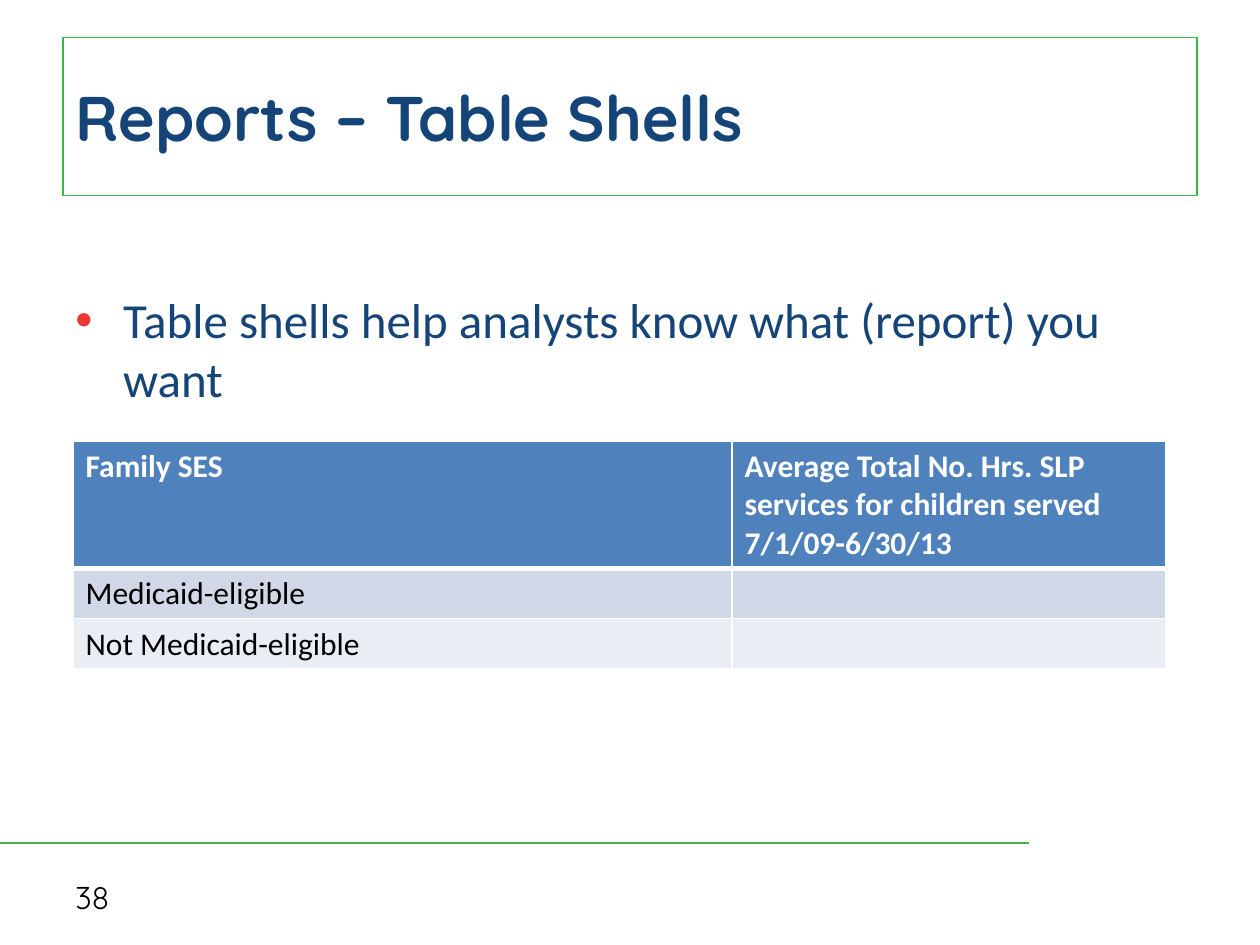
from lxml import etree
from pptx import Presentation
from pptx.dml.color import RGBColor
from pptx.enum import shapes, text
from pptx.oxml.ns import qn
from pptx.util import Inches, Pt

HUES = {"navy": "154578", "green": "39B54A", "red": "ED3532", "blue": "4F81BD",
        "band": "D0D8E8", "pale": "E9EDF4", "white": "FFFFFF", "black": "000000"}


def hue(name):
    return RGBColor.from_string(HUES[name])


def solid(parent, tag, name):
    """Add an element holding one plain colour."""
    node = etree.SubElement(parent, qn(tag))
    etree.SubElement(node, qn("a:srgbClr"), val=HUES[name])


class Deck:
    body = "Calibri"
    head = "Quicksand"

    def __init__(self):
        self.prs = Presentation()
        self.prs.slide_width, self.prs.slide_height = Inches(10), Inches(7.5)
        self.slide = self.prs.slides.add_slide(self.prs.slide_layouts[5])

    def place(self, shape, box):
        shape.left, shape.top, shape.width, shape.height = map(Inches, box)

    def run(self, para, words, size, color, font, bold=False):
        run = para.add_run()
        run.text = words
        run.font.size, run.font.name, run.font.bold = Pt(size), font, bold
        run.font.color.rgb = hue(color)

    def title(self, words, box):
        shape = self.slide.shapes.title
        self.place(shape, box)
        shape.line.color.rgb, shape.line.width = hue("green"), Pt(0.75)
        frame = shape.text_frame
        frame.auto_size = text.MSO_AUTO_SIZE.NONE
        frame.vertical_anchor = text.MSO_ANCHOR.MIDDLE
        para = frame.paragraphs[0]
        para.alignment = text.PP_ALIGN.LEFT
        self.run(para, words, 36, "navy", self.head, True)

    def label(self, words, box, size, color, font, anchor, bullet=False):
        frame = self.slide.shapes.add_textbox(*map(Inches, box)).text_frame
        frame.word_wrap = True
        frame.vertical_anchor = anchor
        para = frame.paragraphs[0]
        if bullet:
            self.bullet(para)
        self.run(para, words, size, color, font)

    def bullet(self, para):
        props = para._p.get_or_add_pPr()
        props.set("marL", str(Inches(0.38)))
        props.set("indent", str(Inches(-0.38)))
        solid(props, "a:buClr", "red")
        etree.SubElement(props, qn("a:buFont"), typeface="Arial")
        etree.SubElement(props, qn("a:buChar"), char="•")
        para.space_after = Pt(6)

    def rule(self, start, end):
        line = self.slide.shapes.add_connector(
            shapes.MSO_CONNECTOR.STRAIGHT, *map(Inches, start + end))
        line.line.color.rgb, line.line.width = hue("green"), Pt(1.5)
        etree.SubElement(line._element.spPr, qn("a:effectLst"))

    def edge(self, cell, widths):
        props = cell._tc.get_or_add_tcPr()
        for spot, (side, width) in enumerate(zip("LRTB", widths)):
            line = etree.Element(qn(f"a:ln{side}"), w=str(Pt(width)))
            fill = etree.SubElement(line, qn("a:solidFill"))
            etree.SubElement(fill, qn("a:srgbClr"), val=HUES["white"])
            props.insert(spot, line)

    def table(self, data, box, cols, rows, fills):
        grid = self.slide.shapes.add_table(
            len(rows), len(cols), *map(Inches, box)).table
        for col, width in zip(grid.columns, cols):
            col.width = Inches(width)
        for r, line in enumerate(data):
            grid.rows[r].height = Inches(rows[r])
            top = r == 0
            for c, words in enumerate(line):
                cell = grid.cell(r, c)
                cell.fill.solid()
                cell.fill.fore_color.rgb = hue(fills[r])
                self.edge(cell, (1, 1, 3 if r == 1 else 1, 3 if top else 1))
                if words:
                    self.run(cell.text_frame.paragraphs[0], words, 18,
                             "white" if top else "black", self.body, top)


def main():
    deck = Deck()

    # Footer rule and slide number
    deck.rule((0, 6.69), (8.17, 6.69))
    deck.label("38", (0.5, 6.92, 2.33, 0.4), 18, "black", deck.head,
               text.MSO_ANCHOR.MIDDLE)

    # Title and bullet
    deck.title("Reports – Table Shells", (0.5, 0.3, 9, 1.25))
    deck.label("Table shells help analysts know what (report) you want",
               (0.5, 2.25, 9, 0.75), 28, "navy", deck.body,
               text.MSO_ANCHOR.TOP, bullet=True)

    # Table shell
    data = [("Family SES", "Average Total No. Hrs. SLP services for children "
                           "served 7/1/09-6/30/13"),
            ("Medicaid-eligible", ""),
            ("Not Medicaid-eligible", "")]
    deck.table(data, (0.58, 3.5, 8.67, 1.81), (5.23, 3.44),
               (1.01, 0.4, 0.4), ("blue", "band", "pale"))

    deck.prs.save("out.pptx")


if __name__ == "__main__":
    main()
